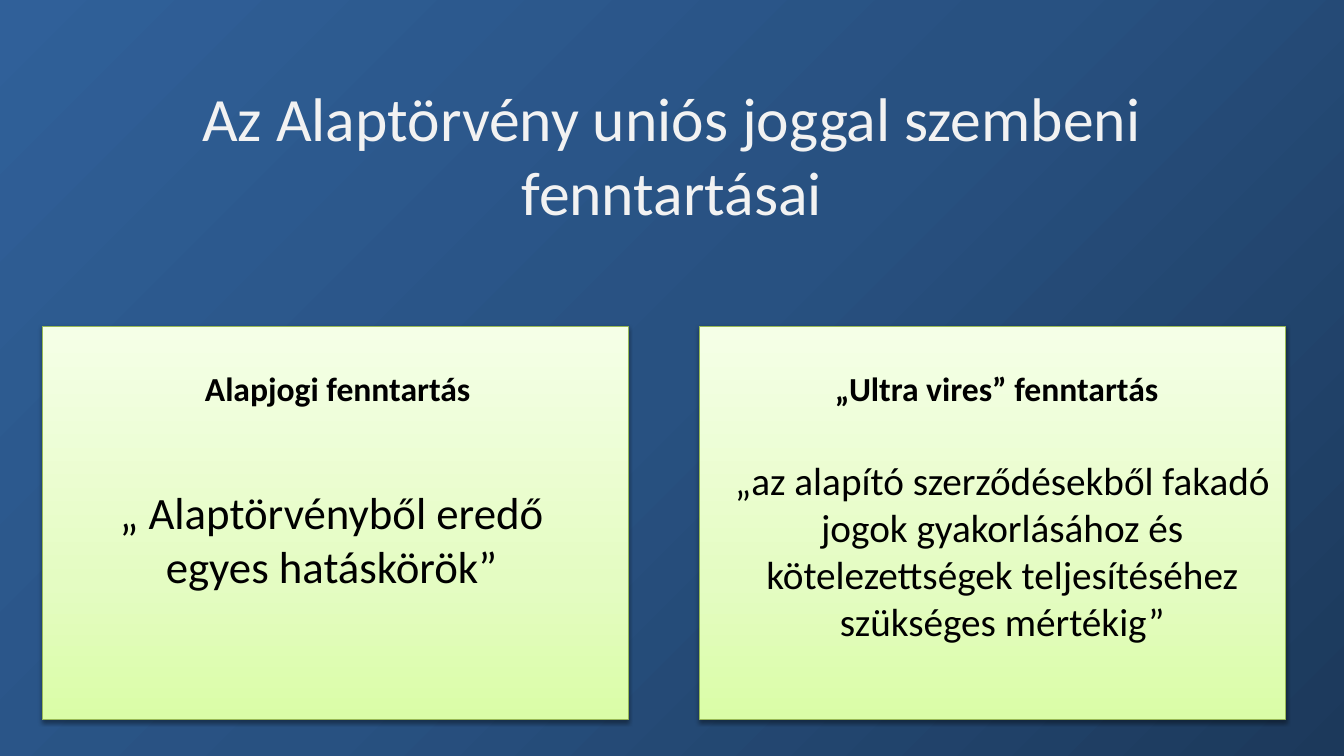
from copy import deepcopy

from lxml.etree import SubElement
from pptx import Presentation
from pptx.dml.color import RGBColor
from pptx.enum.shapes import MSO_SHAPE
from pptx.enum.text import MSO_ANCHOR, PP_ALIGN
from pptx.oxml.ns import qn
from pptx.util import Inches, Pt

COLORS = {
    "title": "F2F2F2",
    "text": "000000",
    "card_line": "98B955",
    "shadow": "000000",
    "deep_blue": "1C395B",
    "middle_blue": "285181",
    "light_blue": "306099",
    "deep_green": "DAFDA7",
    "middle_green": "E4FCC2",
    "light_green": "F5FFE7",
}
FONT = "Calibri"
CARD_TOP, CARD_WIDTH, CARD_HEIGHT = 3.24, 5.81, 3.9


def color(name):
    """Return the named colour."""
    return RGBColor.from_string(COLORS[name])


def add_gradient_box(slide, box, stops, angle):
    """Add a rectangle with a three-stop gradient."""
    shape = slide.shapes.add_shape(MSO_SHAPE.RECTANGLE, *map(Inches, box))
    shape.shadow.inherit = False
    shape.fill.gradient()
    shape.fill.gradient_angle = angle
    stop_list = shape._element.spPr.find(qn("a:gradFill")).find(qn("a:gsLst"))
    stop_list.append(deepcopy(stop_list[0]))
    for stop, (position, name) in zip(shape.fill.gradient_stops, stops):
        stop.position = position
        stop.color.rgb = color(name)
    return shape


def add_text(slide, box, text, size, name="text", bold=False, wrap=True,
             anchor=MSO_ANCHOR.TOP):
    """Add a centred text box."""
    frame = slide.shapes.add_textbox(*map(Inches, box)).text_frame
    frame.word_wrap = wrap
    frame.vertical_anchor = anchor
    paragraph = frame.paragraphs[0]
    paragraph.alignment = PP_ALIGN.CENTER
    run = paragraph.add_run()
    run.text = text
    run.font.name = FONT
    run.font.size = Pt(size)
    run.font.bold = bold
    run.font.color.rgb = color(name)


def add_card_shadow(shape):
    """Give a card a soft shadow below it."""
    effects = shape._element.spPr.find(qn("a:effectLst"))
    shadow = SubElement(effects, qn("a:outerShdw"), blurRad=str(Pt(3.1)),
                        dist=str(Pt(1.6)), dir="5400000", rotWithShape="0")
    tint = SubElement(shadow, qn("a:srgbClr"), val=COLORS["shadow"])
    SubElement(tint, qn("a:alpha"), val="38000")


def add_background(slide, box):
    """Cover the slide with the blue gradient and add the title."""
    left, top, width, height = box
    stops = [(0, "deep_blue"), (0.5, "middle_blue"), (1, "light_blue")]
    add_gradient_box(slide, box, stops, 135).line.fill.background()
    add_text(slide, (left + 1, top + 0.72, width - 2, 1.61),
             "Az Alaptörvény uniós joggal szembeni fenntartásai", 44, "title",
             anchor=MSO_ANCHOR.MIDDLE)


def add_card(slide, box, heading, heading_box, quote, quote_box, quote_size):
    """Add a green card with texts placed from its top left corner."""
    left, top = box[:2]
    stops = [(0, "deep_green"), (0.35, "middle_green"), (1, "light_green")]
    card = add_gradient_box(slide, box, stops, 90)
    card.line.color.rgb = color("card_line")
    card.line.width = Pt(0.75)
    add_card_shadow(card)
    for text, (x, y, width, height), size, is_heading in (
        (heading, heading_box, 24, True),
        (quote, quote_box, quote_size, False),
    ):
        add_text(slide, (left + x, top + y, width, height), text, size,
                 bold=is_heading, wrap=not is_heading)


def main():
    """Build and save the slide."""
    presentation = Presentation()
    presentation.slide_width = Inches(13.33)
    presentation.slide_height = Inches(7.5)
    slide = presentation.slides.add_slide(presentation.slide_layouts[6])
    add_background(slide, (0, 0, 13.33, 7.5))
    add_card(slide, (0.42, CARD_TOP, CARD_WIDTH, CARD_HEIGHT),
             "Alapjogi fenntartás", (1.5, 0.36, 2.86, 0.5),
             "„ Alaptörvényből eredő egyes hatáskörök”",
             (0.58, 1.52, 4.58, 1.18), 32)
    add_card(slide, (6.94, CARD_TOP, CARD_WIDTH, CARD_HEIGHT),
             "„Ultra vires” fenntartás", (1.22, 0.36, 3.45, 0.5),
             "„az alapító szerződésekből fakadó jogok gyakorlásához és "
             "kötelezettségek teljesítéséhez szükséges mértékig”",
             (0, 1.24, 6, 2.46), 28)
    presentation.save("out.pptx")


if __name__ == "__main__":
    main()
